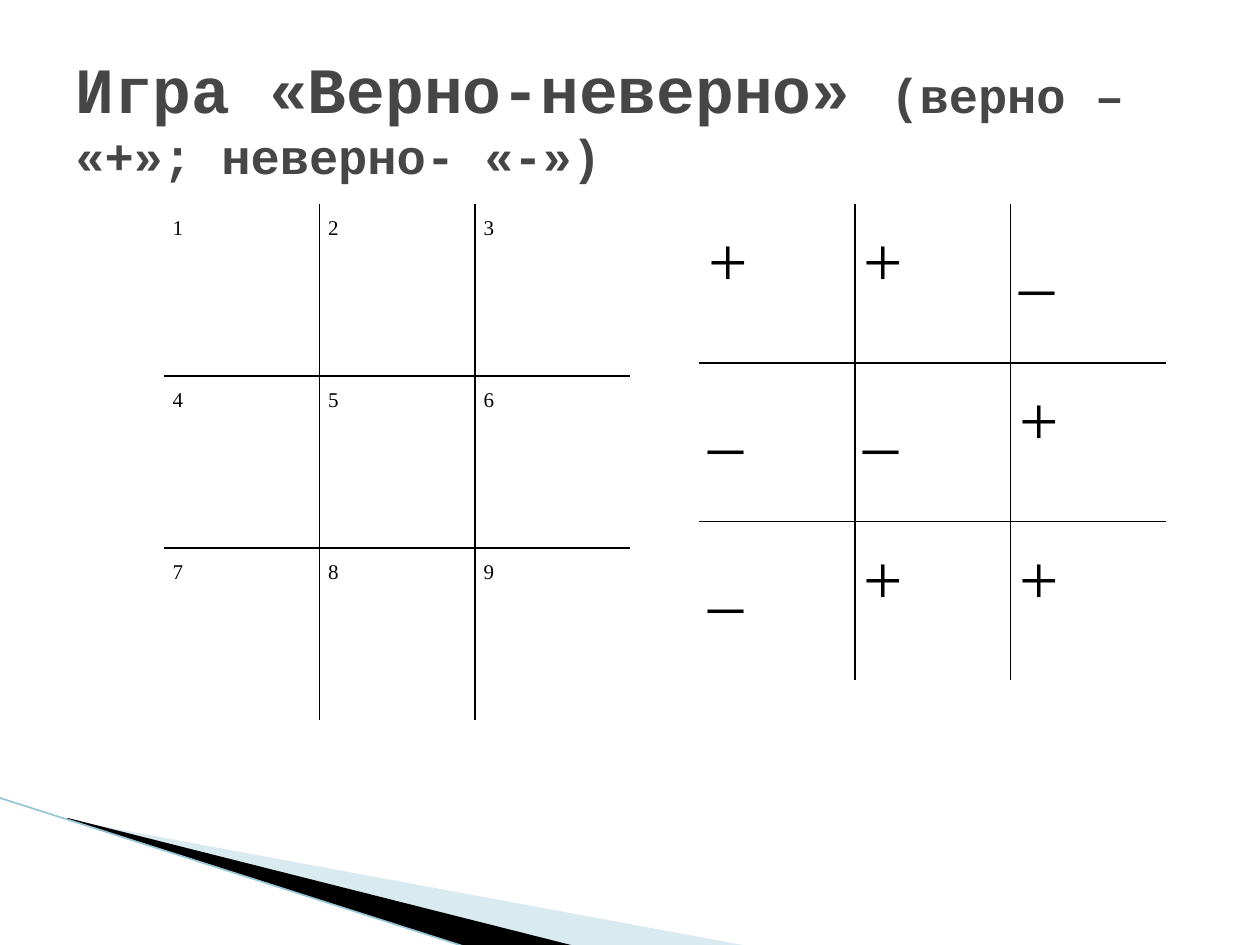
from dataclasses import dataclass

import lxml.etree
import pptx
import pptx.dml.color
import pptx.enum.shapes
import pptx.enum.text
import pptx.oxml.ns
import pptx.util

Inches = pptx.util.Inches
Pt = pptx.util.Pt
qn = pptx.oxml.ns.qn


@dataclass
class Wedge:
    points: list[tuple[float, float]]
    color: str
    opacity: int = 100


@dataclass
class Grid:
    left: float
    row_height: float
    font_size: float
    rows: list[str]


GRID_TOP = 1.62
COLUMN_WIDTH = 1.235
CELL_MARGIN = 0.07

WEDGES = [
    Wedge([(0.55, 6.51), (5.95, 7.51), (4.56, 7.51), (0.55, 6.5)], "A0CBDC", 40),
    Wedge([(0.53, 6.49), (4.57, 7.51), (3.72, 7.52), (0.54, 6.5)], "000000"),
]
GRIDS = [
    Grid(1.3, 1.365, 12, ["123", "456", "789"]),
    Grid(5.55, 1.26, 40, ["++_", "__+", "_++"]),
]


def rgb(color: str) -> pptx.dml.color.RGBColor:
    return pptx.dml.color.RGBColor.from_string(color)


def add_text(paragraph, text: str, *, size: float, font: str,
             color: str = "000000", bold: bool = False) -> None:
    run = paragraph.add_run()
    run.text = text
    run.font.size = Pt(size)
    run.font.name = font
    run.font.bold = bold
    run.font.color.rgb = rgb(color)


def add_wedge(slide, wedge: Wedge) -> None:
    corners = [(Inches(x), Inches(y)) for x, y in wedge.points]
    builder = slide.shapes.build_freeform(*corners[0], scale=1.0)
    builder.add_line_segments(corners[1:], close=True)
    shape = builder.convert_to_shape()
    shape.shadow.inherit = False
    shape.fill.solid()
    shape.fill.fore_color.rgb = rgb(wedge.color)
    shape.line.fill.background()
    if wedge.opacity < 100:
        fill_color = shape.fill._xPr.find(qn("a:solidFill"))[0]
        alpha = lxml.etree.SubElement(fill_color, qn("a:alpha"))
        alpha.set("val", str(wedge.opacity * 1000))


def set_border(cell, side: str, visible: bool) -> None:
    border = lxml.etree.SubElement(cell._tc.get_or_add_tcPr(), qn(f"a:ln{side}"))
    border.set("w", str(Pt(1)))
    if visible:
        fill = lxml.etree.SubElement(border, qn("a:solidFill"))
        lxml.etree.SubElement(fill, qn("a:srgbClr")).set("val", "000000")
    else:
        lxml.etree.SubElement(border, qn("a:noFill"))


def add_grid(slide, grid: Grid) -> None:
    row_count, column_count = len(grid.rows), len(grid.rows[0])
    table = slide.shapes.add_table(
        row_count, column_count, Inches(grid.left), Inches(GRID_TOP),
        Inches(COLUMN_WIDTH * column_count),
        Inches(grid.row_height * row_count)).table
    table.first_row = False
    table.horz_banding = False
    for r, marks in enumerate(grid.rows):
        for c, mark in enumerate(marks):
            cell = table.cell(r, c)
            cell.margin_left = cell.margin_right = Inches(CELL_MARGIN)
            cell.margin_top = cell.margin_bottom = Inches(CELL_MARGIN)
            # Only the inner lines of the grid are drawn
            set_border(cell, "L", c > 0)
            set_border(cell, "R", c < column_count - 1)
            set_border(cell, "T", r > 0)
            set_border(cell, "B", r < row_count - 1)
            cell.fill.background()
            paragraph = cell.text_frame.paragraphs[0]
            paragraph.line_spacing = 1.15
            add_text(paragraph, mark, size=grid.font_size, font="Times New Roman")


def add_title(slide) -> None:
    title = slide.shapes.add_textbox(Inches(0.5), Inches(0.3), Inches(9), Inches(1.25))
    frame = title.text_frame
    frame.word_wrap = True
    frame.vertical_anchor = pptx.enum.text.MSO_ANCHOR.MIDDLE
    for text, size in [("Игра «Верно-неверно» ", 36.9),
                       ("(верно – «+»; неверно- «-»)", 27.9)]:
        add_text(frame.paragraphs[0], text, size=size, font="Courier New",
                 color="464646", bold=True)


def add_edge_line(slide) -> None:
    edge = slide.shapes.add_connector(
        pptx.enum.shapes.MSO_CONNECTOR.STRAIGHT,
        Inches(-0.01), Inches(6.33), Inches(3.71), Inches(7.52))
    edge.line.color.rgb = rgb("97C5D8")
    edge.line.width = Pt(0.95)
    lxml.etree.SubElement(edge._element.spPr, qn("a:effectLst"))


def main() -> None:
    deck = pptx.Presentation()
    deck.slide_width, deck.slide_height = Inches(10), Inches(7.5)
    slide = deck.slides.add_slide(deck.slide_layouts[6])

    # Corner decoration
    for wedge in WEDGES:
        add_wedge(slide, wedge)
    add_edge_line(slide)

    # Title, question grid and answer grid
    add_title(slide)
    for grid in GRIDS:
        add_grid(slide, grid)

    deck.save("out.pptx")


if __name__ == "__main__":
    main()
